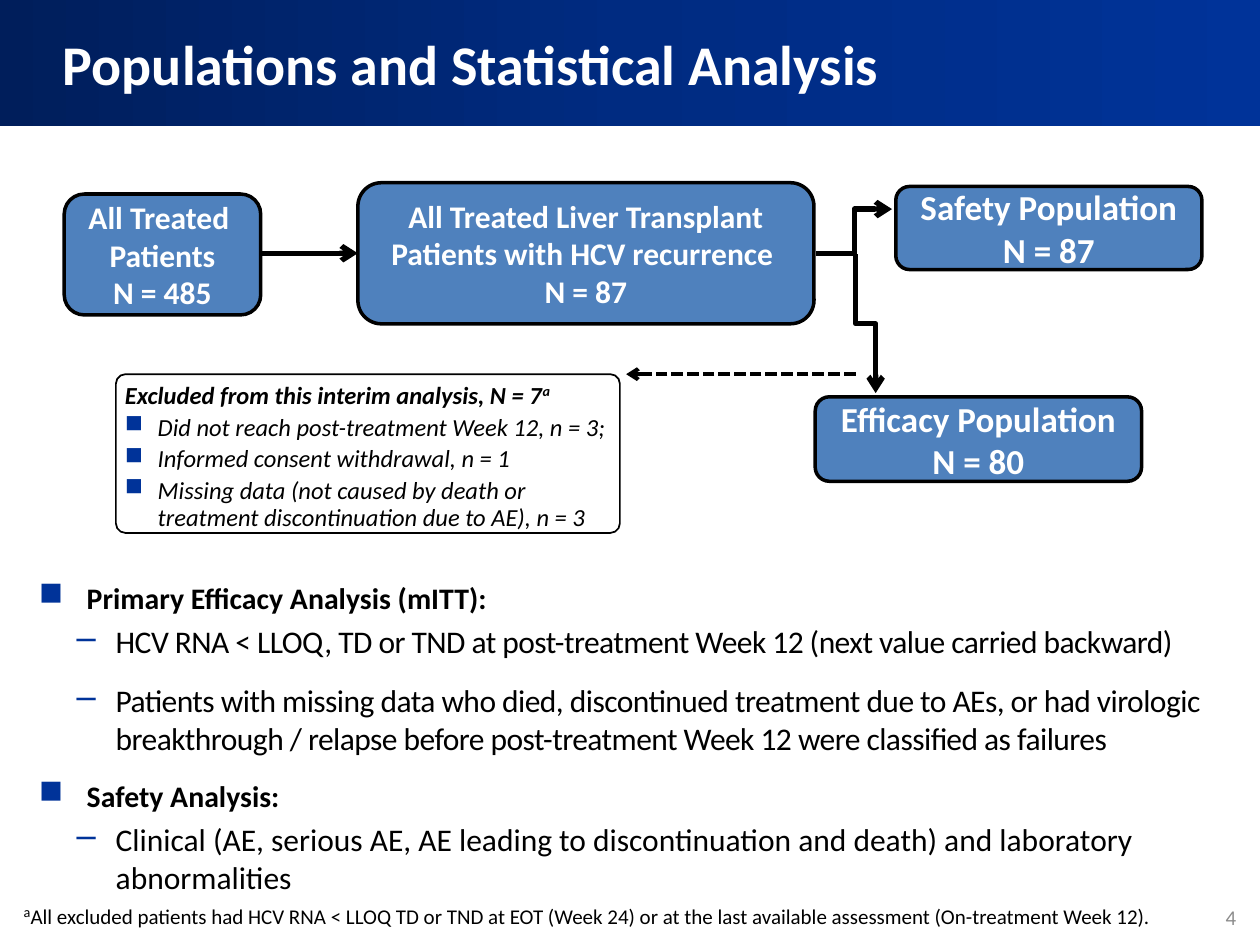
"""Build the slide on study populations and statistical analysis."""
import copy

import pptx
import pptx.dml.color
import pptx.enum.dml
import pptx.enum.shapes
import pptx.enum.text
import pptx.oxml
import pptx.oxml.ns
import pptx.util

Align = pptx.enum.text.PP_ALIGN
Anchor = pptx.enum.text.MSO_ANCHOR
Shape = pptx.enum.shapes.MSO_SHAPE
Connector = pptx.enum.shapes.MSO_CONNECTOR
Pt = pptx.util.Pt
color = pptx.dml.color.RGBColor.from_string
NAMESPACE = pptx.oxml.ns.nsdecls("a")

presentation = pptx.Presentation()
presentation.slide_width = pptx.util.Inches(10)
presentation.slide_height = pptx.util.Inches(7.5)
column = presentation.slide_width // 100
row = presentation.slide_height // 75
slide = presentation.slides.add_slide(presentation.slide_layouts[6])


def add_block(kind, place, fill=None, line_width=0, anchor=Anchor.TOP):
    left, top, width, height = place
    position = (int(left * column), int(top * row), int(width * column), int(height * row))
    if kind is None:
        shape = slide.shapes.add_textbox(*position)
    else:
        shape = slide.shapes.add_shape(kind, *position)
        shape.shadow.inherit = False
        shape.fill.background()
        shape.line.fill.background()
    if fill:
        shape.fill.solid()
        shape.fill.fore_color.rgb = color(fill)
    if line_width:
        shape.line.color.rgb = color("000000")
        shape.line.width = Pt(line_width)
    shape.text_frame.word_wrap = True
    shape.text_frame.vertical_anchor = anchor
    return shape


def add_paragraph(frame, text, size, ink="000000", bold=False, italic=False, align=Align.LEFT,
                  after=0, spacing=1, indent=None, bullet=None, bullet_size=100, tracking=0):
    paragraph = frame.paragraphs[0]
    if paragraph.runs:
        paragraph = frame.add_paragraph()
    paragraph.text = text
    paragraph.alignment = align
    paragraph.space_after = Pt(after)
    paragraph.line_spacing = spacing
    font = paragraph.runs[0].font
    font.name, font.size, font.bold, font.italic = "Calibri", Pt(size), bold, italic
    font.color.rgb = color(ink)
    if tracking:
        paragraph.runs[0]._r.get_or_add_rPr().set("spc", str(tracking))
    properties = paragraph._p.get_or_add_pPr()
    if indent:
        margin, hanging = indent
        properties.set("marL", str(int(margin * column)))
        properties.set("indent", str(-int(hanging * column)))
    if bullet:
        for xml in (f'<a:buClr {NAMESPACE}><a:srgbClr val="003399"/></a:buClr>',
                    f'<a:buSzPct {NAMESPACE} val="{bullet_size * 1000}"/>',
                    f'<a:buChar {NAMESPACE} char="{bullet}"/>'):
            properties.append(pptx.oxml.parse_xml(xml))
    return paragraph


banner = add_block(Shape.RECTANGLE, (0, 0, 100, 10))
banner.fill.gradient()
banner.fill.gradient_angle = 0
stop_list = banner.fill.gradient_stops[0]._gs.getparent()
stop_list.insert(1, copy.deepcopy(stop_list[0]))
for stop, position, shade in zip(banner.fill.gradient_stops, (0, 0.5, 1), ("001E5B", "002B81", "003399")):
    stop.position = position
    stop.color.rgb = color(shade)

title = add_block(None, (0, 0, 100, 10), anchor=Anchor.MIDDLE)
title.text_frame.margin_left = 5 * column
add_paragraph(title.text_frame, "Populations and Statistical Analysis", 32, "FFFFFF", bold=True)

page_number = add_block(None, (95.1, 71.3, 4, 3), anchor=Anchor.MIDDLE)
page_number.text_frame.word_wrap = False
add_paragraph(page_number.text_frame, "4", 12, "8C8C8C", align=Align.RIGHT)

populations = [
    ((5.1, 15.4, 15.6, 9.6), 18, ["All Treated ", "Patients", "N = 485"]),
    ((28.4, 14.5, 36.2, 11.2), 18,
     ["All Treated Liver Transplant Patients with HCV recurrence ", "N = 87"]),
    ((71.1, 14.8, 24.3, 6.6), 20, ["Safety Population", "N = 87"]),
    ((64.7, 31.5, 25.9, 6.7), 20, ["Efficacy Population", "N = 80"]),
]
for place, size, lines in populations:
    box = add_block(Shape.ROUNDED_RECTANGLE, place, "4F81BD", 2, Anchor.MIDDLE)
    for text in lines:
        add_paragraph(box.text_frame, text, size, "FFFFFF", bold=True, align=Align.CENTER)

excluded = add_block(Shape.ROUNDED_RECTANGLE, (9.2, 29.7, 40, 12.6), line_width=1)
excluded.adjustments[0] = 0.06
frame = excluded.text_frame
frame.margin_left = frame.margin_right = frame.margin_top = frame.margin_bottom = column // 2
heading = add_paragraph(frame, "Excluded from this interim analysis, N = 7", 14,
                        bold=True, italic=True, after=3, spacing=0.9)
marker = heading.add_run()
marker.text = "a"
marker._r.insert(0, copy.deepcopy(heading.runs[0]._r.rPr))
marker._r.rPr.set("baseline", "30000")
for text in ("Did not reach post-treatment Week 12, n = 3;",
             "Informed consent withdrawal, n = 1",
             "Missing data (not caused by death or treatment discontinuation due to AE), n = 3"):
    add_paragraph(frame, text, 14, italic=True, after=3, spacing=0.9, indent=(2.6, 2.6), bullet="■")

arrows = [
    (Connector.STRAIGHT, (20.7, 20.1, 28.4, 20.1), 3, False, 0),
    (Connector.STRAIGHT, (67.9, 29.7, 49.7, 29.7), 2.25, True, 0),
    (Connector.ELBOW, (64.8, 20.1, 70.8, 16.6), 3, False, 0),
    (Connector.ELBOW, (74.2, 24.9, 63.2, 26.5), 3, False, 270),
]
for kind, (left, top, right, bottom), width, dashed, turn in arrows:
    arrow = slide.shapes.add_connector(kind, int(left * column), int(top * row),
                                       int(right * column), int(bottom * row))
    arrow.line.color.rgb = color("000000")
    arrow.line.width = Pt(width)
    if dashed:
        arrow.line.dash_style = pptx.enum.dml.MSO_LINE.SQUARE_DOT
    if turn:
        arrow._element.spPr.xfrm.set("rot", str(turn * 60000))
    arrow.line._get_or_add_ln().append(pptx.oxml.parse_xml(f'<a:tailEnd {NAMESPACE} type="arrow"/>'))
    arrow._element.spPr.append(pptx.oxml.parse_xml(f"<a:effectLst {NAMESPACE}/>"))

analyses = add_block(None, (2.1, 45.5, 94.9, 22.6))
sections = [
    ("Primary Efficacy Analysis (mITT):", -30, 12,
     ["HCV RNA < LLOQ, TD or TND at post-treatment Week 12 (next value carried backward)",
      "Patients with missing data who died, discontinued treatment due to AEs, or had virologic "
      "breakthrough / relapse before post-treatment Week 12 were classified as failures"]),
    ("Safety Analysis:", 0, 6,
     ["Clinical (AE, serious AE, AE leading to discontinuation and death) and laboratory abnormalities"]),
]
for section, tracking, after, details in sections:
    add_paragraph(analyses.text_frame, section, 17, bold=True, after=4,
                  indent=(3.8, 3.8), bullet="■", bullet_size=110)
    for detail in details:
        add_paragraph(analyses.text_frame, detail, 18, after=after, indent=(6.1, 3.1),
                      bullet="–", bullet_size=110, tracking=tracking)

footnote = add_block(None, (0.9, 71.2, 93, 2.8))
note = add_paragraph(footnote.text_frame, "a", 14, after=3, spacing=0.9, indent=(1.2, 1.2))
note.runs[0]._r.rPr.set("baseline", "30000")
note_run = note.add_run()
note_run.text = ("All excluded patients had HCV RNA < LLOQ TD or TND at EOT (Week 24) or at the "
                 "last available assessment (On-treatment Week 12).")
note_run.font.name, note_run.font.size = "Calibri", Pt(12)
note_run.font.color.rgb = color("000000")

presentation.save("out.pptx")
